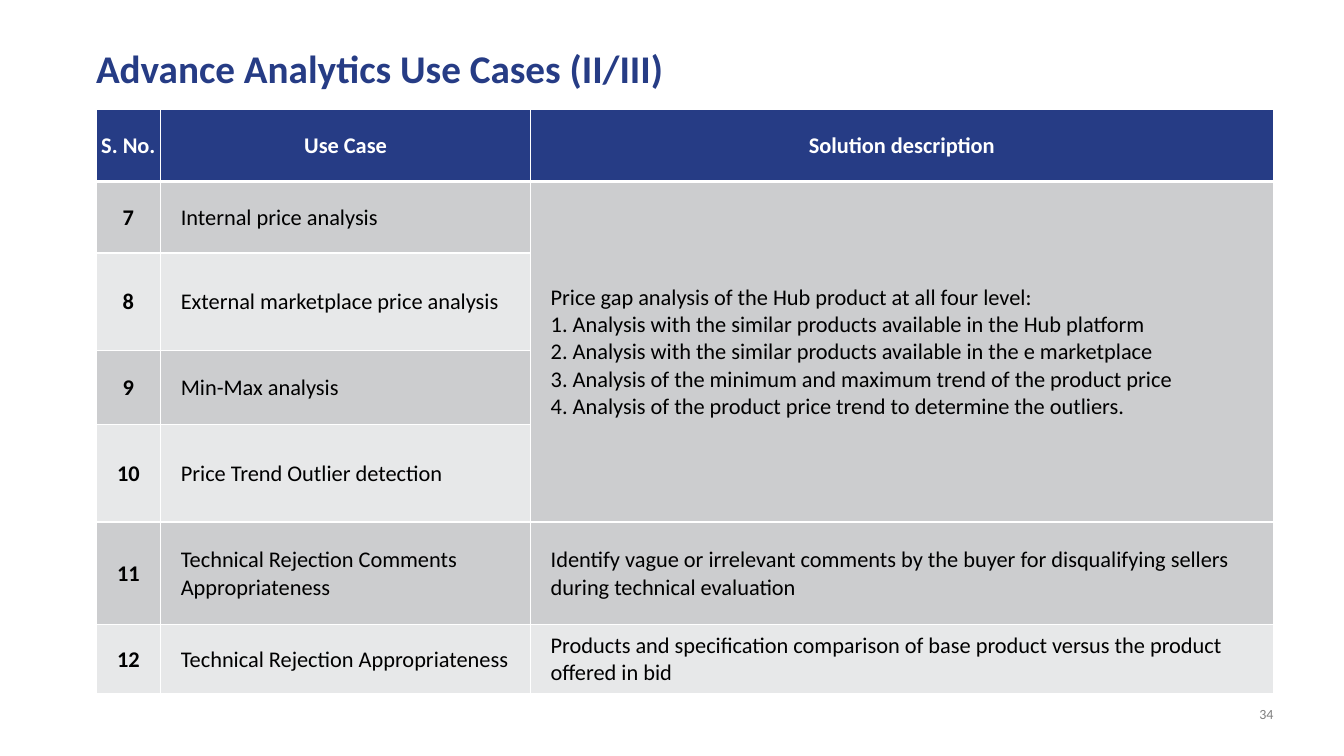
from dataclasses import dataclass

from lxml import etree
from pptx import Presentation
from pptx import util as u
from pptx.dml.color import RGBColor
from pptx.enum import text
from pptx.oxml import ns


@dataclass(frozen=True)
class Theme:
    font: str = "Calibri"
    navy: str = "263C85"
    white: str = "FFFFFF"
    black: str = "000000"
    grey: str = "808080"
    bands: tuple = ("CCCDCF", "E7E8E9")
    title_size: int = 28
    table_size: int = 16
    number_size: int = 10


class SlideBuilder:
    """Adds styled elements to one slide, with lengths in points."""

    def __init__(self, slide, theme):
        self.slide = slide
        self.theme = theme

    def style(self, frame, size, color, bold=False, align=text.PP_ALIGN.LEFT,
              anchor=text.MSO_ANCHOR.MIDDLE):
        frame.word_wrap = True
        frame.vertical_anchor = anchor
        for paragraph in frame.paragraphs:
            paragraph.alignment = align
            font = paragraph.font
            font.name, font.size, font.bold = self.theme.font, u.Pt(size), bold
            font.color.rgb = RGBColor.from_string(color)

    def place(self, shape, left, top, width, height):
        shape.left, shape.top = u.Pt(left), u.Pt(top)
        shape.width, shape.height = u.Pt(width), u.Pt(height)
        frame = shape.text_frame
        frame.margin_left = frame.margin_right = 0
        frame.margin_top = frame.margin_bottom = 0
        return frame

    def title(self, words, *box):
        frame = self.place(self.slide.shapes.title, *box)
        frame.text = words
        frame.auto_size = text.MSO_AUTO_SIZE.NONE
        frame.paragraphs[0].line_spacing = 0.9
        self.style(frame, self.theme.title_size, self.theme.navy, bold=True)

    def page_number(self, number, *box):
        shape = self.slide.shapes.add_textbox(0, 0, 0, 0)
        frame = self.place(shape, *box)
        frame.text = str(number)
        self.style(frame, self.theme.number_size, self.theme.grey,
                   align=text.PP_ALIGN.RIGHT, anchor=text.MSO_ANCHOR.BOTTOM)

    def borders(self, cell, **widths):
        properties = cell._tc.get_or_add_tcPr()
        for side, width in widths.items():
            line = etree.SubElement(properties, ns.qn(f"a:ln{side}"), w=str(u.Pt(width)))
            fill = etree.SubElement(line, ns.qn("a:solidFill"))
            etree.SubElement(fill, ns.qn("a:srgbClr"), val=self.theme.white)

    def cell(self, cell, words, row, column):
        header = row == 0
        centred = header or column == 0
        self.borders(cell, L=1, R=1, T=3 if row == 1 else 1, B=3 if header else 1)
        cell.fill.solid()
        fill = self.theme.navy if header else self.theme.bands[(row - 1) % 2]
        cell.fill.fore_color.rgb = RGBColor.from_string(fill)
        cell.margin_left = u.Pt(0.72 if centred else 14.4)
        cell.margin_right = cell.margin_top = u.Pt(0.72)
        cell.margin_bottom = 0
        cell.vertical_anchor = text.MSO_ANCHOR.MIDDLE
        cell.text_frame.text = words
        self.style(cell.text_frame, self.theme.table_size,
                   self.theme.white if header else self.theme.black, bold=centred,
                   align=text.PP_ALIGN.CENTER if centred else text.PP_ALIGN.LEFT)

    def table(self, rows, left, top, widths, heights, merges):
        table = self.slide.shapes.add_table(
            len(rows), len(widths), u.Pt(left), u.Pt(top),
            u.Pt(sum(widths)), u.Pt(sum(heights))).table
        for column, width in zip(table.columns, widths):
            column.width = u.Pt(width)
        for row, height in zip(table.rows, heights):
            row.height = u.Pt(height)
        for row, values in enumerate(rows):
            for column, words in enumerate(values):
                self.cell(table.cell(row, column), words, row, column)
        for first, last in merges:
            table.cell(*first).merge(table.cell(*last))


PRICE_GAP = "\v".join([
    "Price gap analysis of the Hub product at all four level:",
    "1. Analysis with the similar products available in the Hub platform",
    "2. Analysis with the similar products available in the e marketplace",
    "3. Analysis of the minimum and maximum trend of the product price",
    "4. Analysis of the product price trend to determine the outliers.",
])
USE_CASES = [
    ("S. No.", "Use Case", "Solution description"),
    ("7", "Internal price analysis", PRICE_GAP),
    ("8", "External marketplace price analysis", ""),
    ("9", "Min-Max analysis", ""),
    ("10", "Price Trend Outlier detection", ""),
    ("11", "Technical Rejection Comments Appropriateness",
     "Identify vague or irrelevant comments by the buyer for disqualifying sellers "
     "during technical evaluation"),
    ("12", "Technical Rejection Appropriateness",
     "Products and specification comparison of base product versus the product "
     "offered in bid"),
]


def main():
    presentation = Presentation()
    presentation.slide_width, presentation.slide_height = u.Pt(960), u.Pt(540)
    slide = presentation.slides.add_slide(presentation.slide_layouts[5])
    builder = SlideBuilder(slide, Theme())
    builder.title("Advance Analytics Use Cases (II/III)", 68.6, 35.3, 841, 30.2)
    builder.table(USE_CASES, 68.6, 78.5, widths=(46.2, 264.2, 530.6),
                  heights=(51.1, 51.1, 69.8, 52.6, 69.8, 73.4, 49),
                  merges=[((1, 2), (4, 2))])
    builder.page_number(34, 879.1, 504, 30.5, 12.2)
    presentation.save("out.pptx")


if __name__ == "__main__":
    main()
